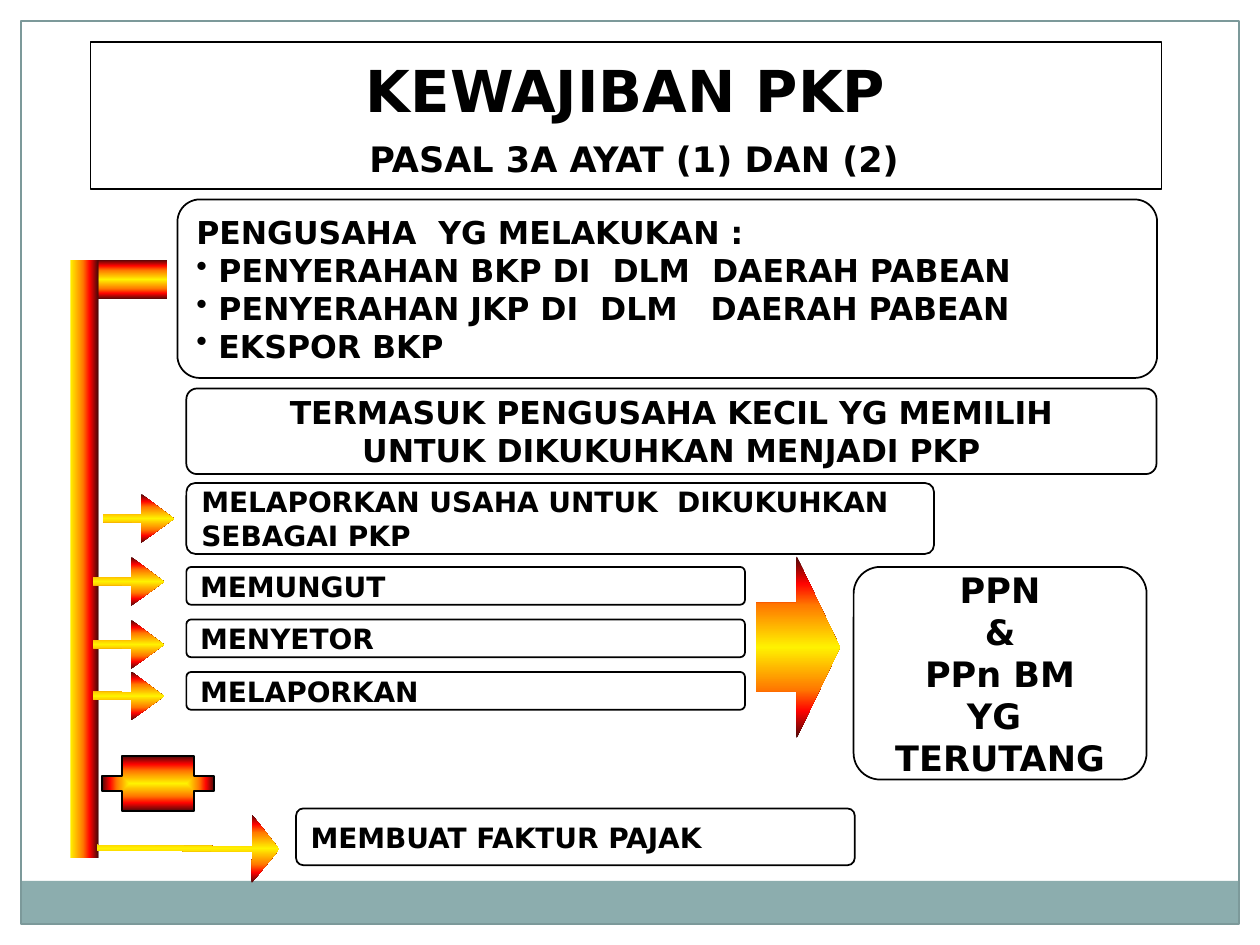
from lxml.etree import SubElement
from pptx import Presentation
from pptx.dml.color import RGBColor
from pptx.enum.shapes import MSO_SHAPE as S
from pptx.enum.text import MSO_ANCHOR, MSO_AUTO_SIZE, PP_ALIGN
from pptx.oxml.ns import qn
from pptx.util import Inches, Pt

COLS, ROWS = 120, 90
FONT = "DejaVu Sans"
GLOW = [(0, "4D0808"), (15, "FF0300"), (27, "FF7A00"), (50, "FFF200"),
        (73, "FF7A00"), (85, "FF0300"), (100, "4D0808")]
FIRE = [(0, "FFF200"), (45, "FF7A00"), (70, "FF0300"), (100, "4D0808")]

deck = Presentation()
deck.slide_width, deck.slide_height = Inches(10), Inches(7.5)
slide = deck.slides.add_slide(deck.slide_layouts[5])


def color(code):
    return RGBColor.from_string(code)


def grid(box):
    """Turn columns and rows into slide lengths."""
    wide, high = deck.slide_width / COLS, deck.slide_height / ROWS
    return [int(n * unit) for n, unit in zip(box, (wide, high, wide, high))]


def style(run, size):
    run.font.name, run.font.size, run.font.bold = FONT, Pt(size), True
    run.font.color.rgb = color("000000")


def edge(shape, code, width):
    shape.line.color.rgb = color(code)
    shape.line.width = Pt(width)


def draw(kind, box, fill=None, line=None, width=1, adj=()):
    shape = slide.shapes.add_shape(kind, *grid(box))
    shape.shadow.inherit = False
    for i, share in enumerate(adj):
        shape.adjustments[i] = share
    if fill:
        shape.fill.solid()
        shape.fill.fore_color.rgb = color(fill)
    else:
        shape.fill.background()
    if line:
        edge(shape, line, width)
    else:
        shape.line.fill.background()
    return shape


def blend(shape, stops, angle=None):
    """Fill with a linear gradient, or from the centre if no angle is given."""
    shape.fill.gradient()
    grad = shape._element.spPr.find(qn("a:gradFill"))
    for part in list(grad):
        grad.remove(part)
    grad.set("rotWithShape", "0")
    row = SubElement(grad, qn("a:gsLst"))
    for spot, code in stops:
        stop = SubElement(row, qn("a:gs"), pos=str(spot * 1000))
        SubElement(stop, qn("a:srgbClr"), val=code)
    if angle is None:
        way = SubElement(grad, qn("a:path"), {"path": "shape"})
        SubElement(way, qn("a:fillToRect"), dict.fromkeys("ltrb", "50000"))
    else:
        SubElement(grad, qn("a:lin"), ang=str(angle * 60000), scaled="1")


def panel(box, lines, size, align=PP_ALIGN.LEFT):
    """Rounded box with one paragraph a line; a leading bullet becomes real."""
    frame = draw(S.ROUNDED_RECTANGLE, box, line="000000", adj=[0.125]).text_frame
    frame.word_wrap = False
    frame.vertical_anchor = MSO_ANCHOR.MIDDLE
    frame.text = "\n".join(line.removeprefix("•") for line in lines)
    for line, para in zip(lines, frame.paragraphs):
        para.alignment = align
        if line.startswith("•"):
            SubElement(para._p.get_or_add_pPr(), qn("a:buChar"), char="•")
        style(para.runs[0], size)


def border(gap):
    """White margins, bottom band and thin frame."""
    for box in ((0, 0, COLS, gap), (COLS - gap, 0, gap, ROWS), (0, 0, gap, ROWS)):
        draw(S.RECTANGLE, box, "FFFFFF")
    draw(S.RECTANGLE, (gap, 83.9, COLS - 2 * gap, 4.1), "8CADAE")
    draw(S.RECTANGLE, (gap, gap, COLS - 2 * gap, ROWS - 2 * gap),
         line="7C999A", width=0.75)


def heading(box):
    title = slide.shapes.title
    title.left, title.top, title.width, title.height = grid(box)
    edge(title, "000000", 0.75)
    frame = title.text_frame
    frame.auto_size = MSO_AUTO_SIZE.NONE
    frame.vertical_anchor = MSO_ANCHOR.BOTTOM
    frame.text = "KEWAJIBAN PKP\v "
    para = frame.paragraphs[0]
    para.alignment = PP_ALIGN.CENTER
    para.add_run().text = "PASAL 3A AYAT (1) DAN (2)"
    for run, size in zip(para.runs, (33, 28, 20)):
        style(run, size)


def arrow(box, adj):
    shape = draw(S.DOWN_ARROW, box, adj=adj)
    shape.rotation = 270.5
    blend(shape, GLOW, 90)


def spine(left, top):
    """Upright bar, its top branch, the plus and the arrows to each duty."""
    blend(draw(S.RECTANGLE, (left + 1.25, top, 8, 3.75)), GLOW, 90)
    blend(draw(S.RECTANGLE, (left, top, 2.65, 57)), FIRE, 0)
    blend(draw(S.CROSS, (left + 3, 72, 10.7, 5.25), line="000000", adj=[0.36]), FIRE)
    arrow((left + 8, 72.1, 6.4, 17.4), [0.078, 0.404])
    for shift, row in ((4.2, 46), (3.25, 52), (3.25, 58), (3.25, 62.9)):
        arrow((left + shift, row, 4.6, 6.75), [0.16, 0.675])


def duties(left, top):
    """Duties in a column, leading to the tax that is due."""
    panel((left, top, 71.2, 6.75),
          ["MELAPORKAN USAHA UNTUK  DIKUKUHKAN", "SEBAGAI PKP"], 16)
    for i, name in enumerate(("MEMUNGUT", "MENYETOR", "MELAPORKAN")):
        panel((left, top + 8 + 5 * i, 53.2, 3.6), [name], 16)
    panel((left + 10.45, top + 31, 53.2, 5.4), ["MEMBUAT FAKTUR PAJAK"], 16)
    big = draw(S.RIGHT_ARROW, (72, top + 7, 8, 17.3), adj=[0.488, 0.517])
    blend(big, GLOW, 90)
    panel((81.3, top + 8, 27.9, 20.25),
          ["PPN", "&", "PPn BM", "YG ", "TERUTANG"], 20, PP_ALIGN.CENTER)


border(2)
heading((8.6, 4, 102, 14))
panel((16.9, 19, 93.3, 17),
      ["PENGUSAHA  YG MELAKUKAN :",
       "• PENYERAHAN BKP DI  DLM  DAERAH PABEAN",
       "• PENYERAHAN JKP DI  DLM   DAERAH PABEAN",
       "• EKSPOR BKP"], 18)
panel((17.75, 37, 92.4, 8.15),
      ["TERMASUK PENGUSAHA KECIL YG MEMILIH", "UNTUK DIKUKUHKAN MENJADI PKP"],
      18, PP_ALIGN.CENTER)
duties(17.75, 46)
spine(6.7, 24.75)
deck.save("out.pptx")
